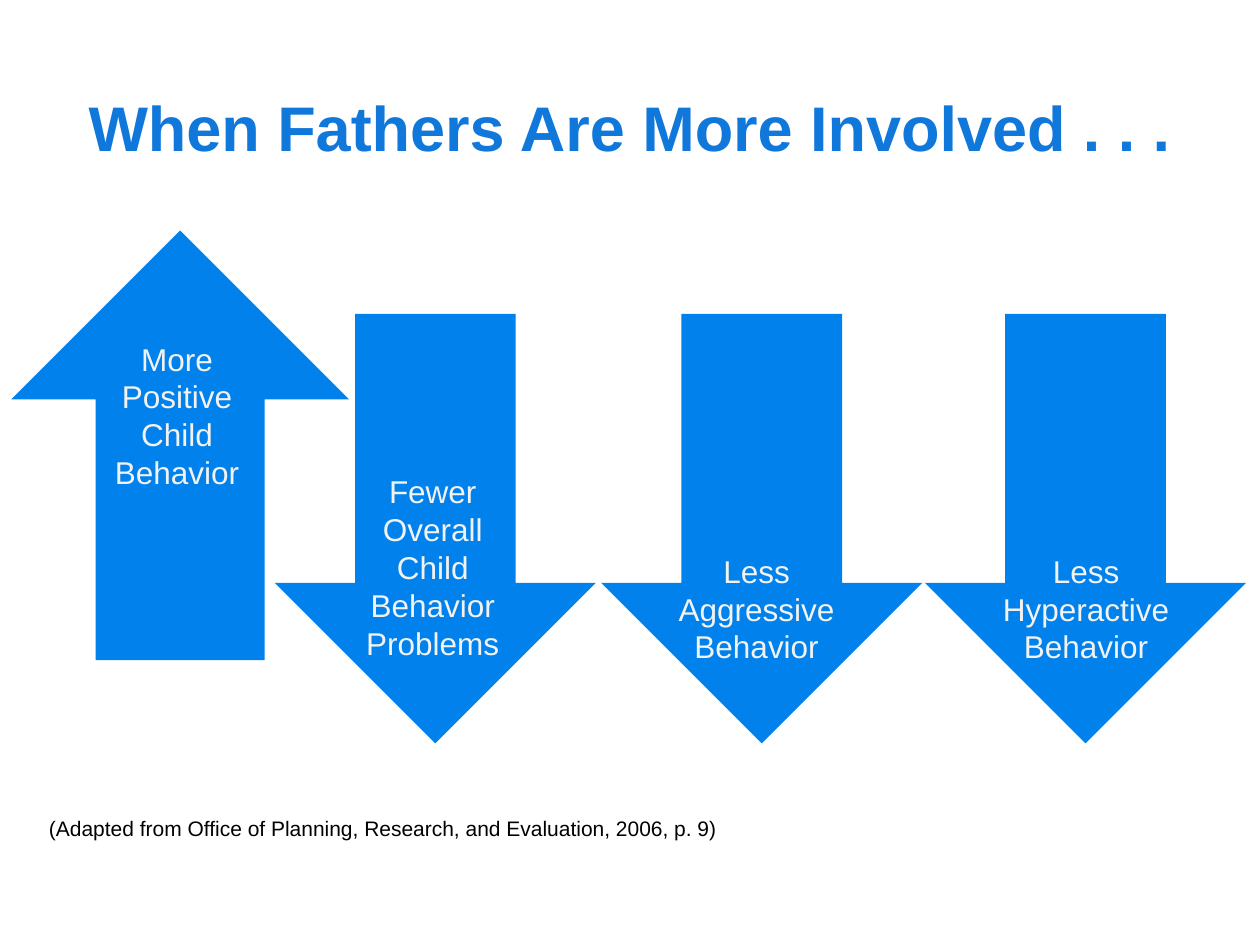
from pptx import Presentation
from pptx.dml.color import RGBColor
from pptx.enum.shapes import MSO_SHAPE
from pptx.enum.text import MSO_ANCHOR, PP_ALIGN
from pptx.util import Inches, Pt


def style(para, size, color, align, bold=False):
    para.alignment = align
    para.font.name = "Arial"
    para.font.size = Pt(size)
    para.font.bold = bold
    para.font.color.rgb = RGBColor.from_string(color)


deck = Presentation()
deck.slide_width, deck.slide_height = Inches(10), Inches(7.5)
page = deck.slides.add_slide(deck.slide_layouts[5])

title = page.shapes.title
title.left, title.top = Inches(0), Inches(0.38)
title.width, title.height = Inches(10), Inches(1.25)
title.text_frame.text = "When Fathers Are More Involved . . ."
title.text_frame.vertical_anchor = MSO_ANCHOR.MIDDLE
style(title.text_frame.paragraphs[0], 36, "1077DB", PP_ALIGN.CENTER, bold=True)

citation = page.shapes.add_textbox(Inches(0.29), Inches(6.42), Inches(5.59), Inches(0.29))
citation.text_frame.word_wrap = True
citation.text_frame.text = "(Adapted from Office of Planning, Research, and Evaluation, 2006, p. 9)"
style(citation.text_frame.paragraphs[0], 12, "000000", PP_ALIGN.LEFT)

# Arrow (left, top, width), rotation, label (left, top, width, height), label lines
outcomes = [
    ((0.09, 1.83, 2.68), 0, (0.7, 2.73, 1.41, 1.13), "More\nPositive\nChild\nBehavior"),
    ((2.18, 2.49, 2.55), 180, (2.67, 4.02, 1.53, 0.96),
     "Fewer\nOverall\nChild\nBehavior\nProblems"),
    ((4.77, 2.49, 2.55), 180, (5.15, 4.35, 1.71, 0.96), "Less\nAggressive\nBehavior"),
    ((7.34, 2.49, 2.55), 180, (7.8, 4.35, 1.64, 0.96), "Less\nHyperactive\nBehavior"),
]
for (left, top, width), rotation, label_place, lines in outcomes:
    arrow = page.shapes.add_shape(
        MSO_SHAPE.UP_ARROW, Inches(left), Inches(top), Inches(width), Inches(3.41))
    arrow.rotation = rotation
    arrow.shadow.inherit = False
    arrow.fill.solid()
    arrow.fill.fore_color.rgb = RGBColor.from_string("0081EB")
    arrow.line.fill.background()

    label = page.shapes.add_textbox(*[Inches(length) for length in label_place])
    frame = label.text_frame
    frame.word_wrap = True
    frame.vertical_anchor = MSO_ANCHOR.MIDDLE
    frame.margin_left = frame.margin_right = frame.margin_top = frame.margin_bottom = 0
    frame.text = lines
    for para in frame.paragraphs:
        style(para, 18, "F2F2F2", PP_ALIGN.CENTER)

deck.save("out.pptx")
